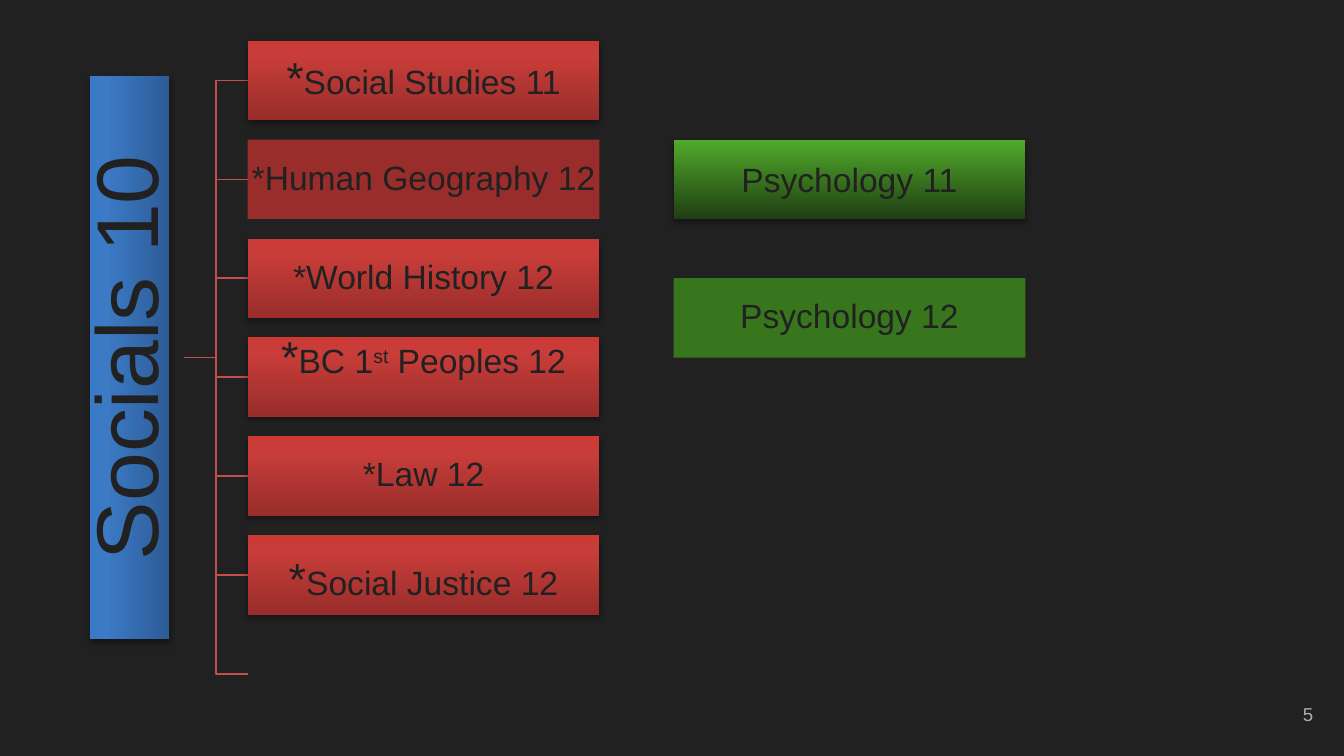
"""Build the Socials 10 course pathway slide."""
import pptx
import pptx.dml.color
import pptx.enum.shapes
import pptx.enum.text
import pptx.oxml
import pptx.oxml.ns
import pptx.util
from lxml import etree
from pptx.util import Cm

INK = "212121"
RED = [(0, "982D2B"), (80, "C83D39"), (100, "CC3A36")]
BLUE = [(0, "2D5C97"), (80, "3C7AC5"), (100, "397BC9")]
GREEN = [(0, "203E13"), (100, "51AB2A")]
NAMESPACE = pptx.oxml.ns.nsdecls("a")


def rgb(value):
    return pptx.dml.color.RGBColor.from_string(value)


def add_course(left, top, width, height, fill, runs, size=18, spacing=0.9, inset_top=0.05, inset_bottom=0.05):
    box = slide.shapes.add_shape(pptx.enum.shapes.MSO_SHAPE.RECTANGLE, Cm(left), Cm(top), Cm(width), Cm(height))
    box.line.fill.background()
    box.shadow.inherit = False
    if isinstance(fill, str):
        box.fill.solid()
        box.fill.fore_color.rgb = rgb(fill)
    else:
        box.fill.gradient()
        box.fill.gradient_angle = 90
        properties = box._element.spPr
        stops = properties.find(".//" + pptx.oxml.ns.qn("a:gsLst"))
        stops[:] = [
            pptx.oxml.parse_xml(f'<a:gs {NAMESPACE} pos="{position * 1000}"><a:srgbClr val="{color}"/></a:gs>')
            for position, color in fill
        ]
        properties.find(pptx.oxml.ns.qn("a:effectLst")).append(pptx.oxml.parse_xml(
            f'<a:outerShdw {NAMESPACE} blurRad="40000" dist="23000" dir="5400000" rotWithShape="0">'
            '<a:srgbClr val="000000"><a:alpha val="35000"/></a:srgbClr></a:outerShdw>'))
    frame = box.text_frame
    frame.word_wrap = True
    frame.vertical_anchor = pptx.enum.text.MSO_ANCHOR.MIDDLE
    frame.margin_left = frame.margin_right = Cm(0.05)
    frame.margin_top, frame.margin_bottom = Cm(inset_top), Cm(inset_bottom)
    label = frame.paragraphs[0]
    label.alignment = pptx.enum.text.PP_ALIGN.CENTER
    label.line_spacing = spacing
    label.font.name = "Arial"
    label.font.size = pptx.util.Pt(size)
    label.font.color.rgb = rgb(INK)
    for text, style in runs:
        run = label.add_run()
        run.text = text
        if style == "large":
            run.font.size = pptx.util.Pt(24)
        elif style == "super":
            run._r.get_or_add_rPr().set("baseline", "30000")
    return box


deck = pptx.Presentation()
deck.slide_width, deck.slide_height = Cm(25.4), Cm(14.29)
slide = deck.slides.add_slide(deck.slide_layouts[6])
slide.background.fill.solid()
slide.background.fill.fore_color.rgb = rgb(INK)

course_left, course_top, course_width, course_height = 4.68, 0.77, 6.65, 1.5
pitch = 1.87
trunk_x, trunk_y = 3.48, 6.76

for row in reversed(range(7)):
    branch_y = course_top + course_height / 2 + row * pitch
    branch = slide.shapes.add_connector(
        pptx.enum.shapes.MSO_CONNECTOR.ELBOW, Cm(trunk_x), Cm(trunk_y), Cm(course_left), Cm(branch_y))
    branch.line.color.rgb = rgb("BF504D")
    branch.line.width = pptx.util.Pt(0.75)
    etree.SubElement(branch._element.spPr, pptx.oxml.ns.qn("a:effectLst"))

root_length, root_center = 10.65, 2.45
root = add_course(root_center - root_length / 2, trunk_y - course_height / 2, root_length, course_height,
                  BLUE, [("Socials 10", "")], size=47)
root.rotation = 270

socials = [
    (RED, [("*", "large"), ("Social Studies 11", "")], {}),
    ("982D2B", [("*Human Geography 12", "")], {}),
    (RED, [("*World History 12", "")], {}),
    (RED, [("*", "large"), ("BC 1", ""), ("st", "super"), (" Peoples 12", "")], {"inset_bottom": 0.73}),
    (RED, [("*Law 12", "")], {}),
    (RED, [("*", "large"), ("Social Justice 12", "")], {"inset_top": 0.28}),
]
for row, (fill, runs, insets) in enumerate(socials):
    add_course(course_left, course_top + row * pitch, course_width, course_height, fill, runs, **insets)

psychology_left = 12.73
add_course(psychology_left, 2.64, course_width, course_height, GREEN, [("Psychology 11", "")], spacing=1.0)
add_course(psychology_left, 5.26, course_width, course_height, "38761D", [("Psychology 12", "")])

page_number = slide.shapes.add_textbox(Cm(23.55), Cm(12.95), Cm(1.52), Cm(1.09)).text_frame
page_number.word_wrap = True
page_number.vertical_anchor = pptx.enum.text.MSO_ANCHOR.MIDDLE
number = page_number.paragraphs[0]
number.text = "5"
number.alignment = pptx.enum.text.PP_ALIGN.RIGHT
number.font.name = "Arial"
number.font.size = pptx.util.Pt(10)
number.font.color.rgb = rgb("ADADAD")

deck.save("out.pptx")
